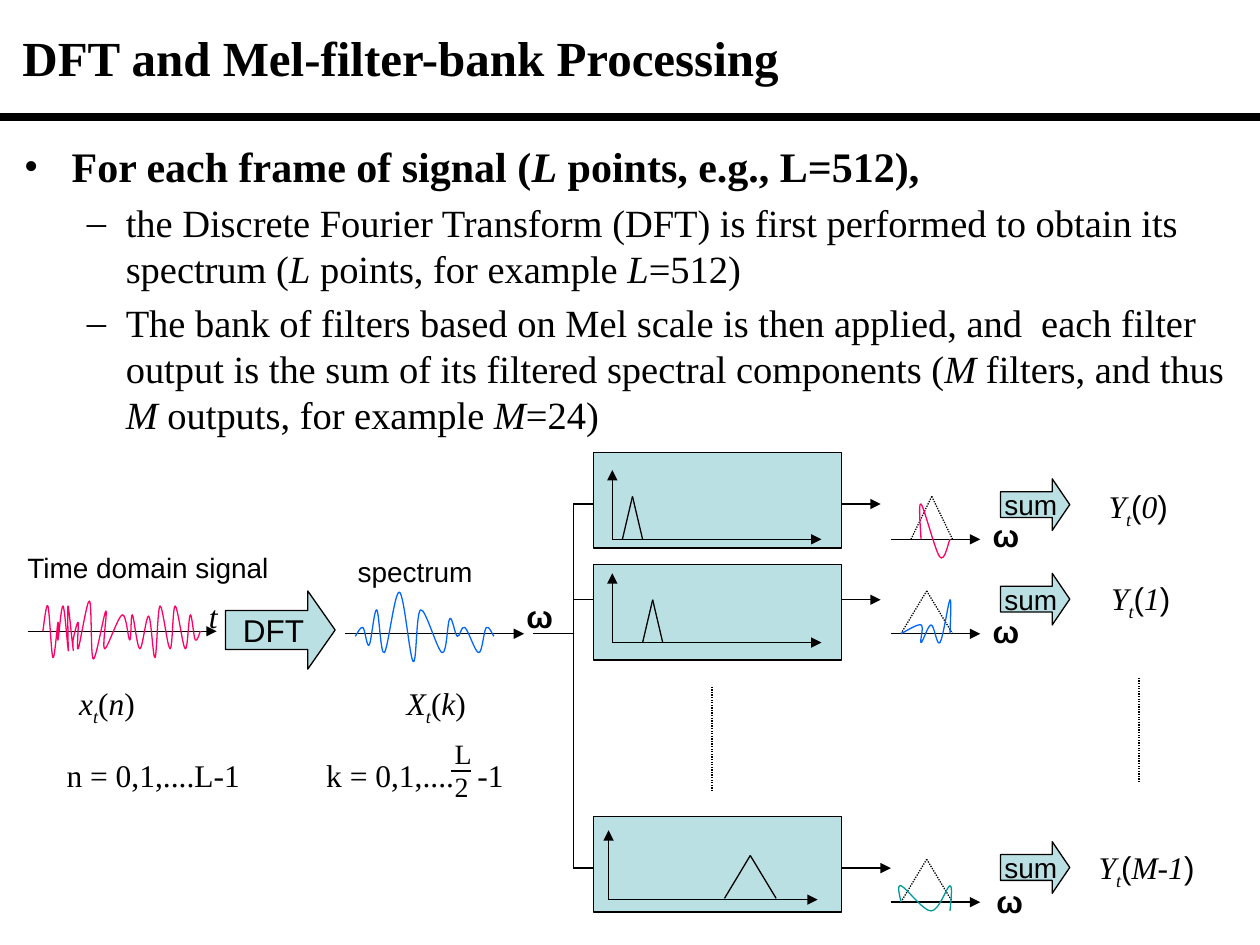
import pptx
import pptx.util
import pptx.dml.color
import pptx.enum.dml
import pptx.enum.shapes
import pptx.enum.text
import pptx.oxml
import pptx.oxml.ns

Inches = pptx.util.Inches
Pt = pptx.util.Pt
RGB = pptx.dml.color.RGBColor.from_string
SHAPE = pptx.enum.shapes.MSO_SHAPE
ANCHOR = pptx.enum.text.MSO_ANCHOR
qn = pptx.oxml.ns.qn
NS = pptx.oxml.ns.nsdecls("a")
theme = {
    "ink": RGB("000000"), "panel": RGB("BBE0E3"),
    "pink": RGB("FF0066"), "blue": RGB("0066FF"), "teal": RGB("009999"),
    "serif": "Times New Roman", "sans": "Arial",
    "title": 28, "lead": 24, "body": 22, "label": 18, "small": 16,
    "hairline": 0.75, "rule": 4.5,
}

deck = pptx.Presentation()
deck.slide_width, deck.slide_height = Inches(10), Inches(7.5)
page = deck.slides.add_slide(deck.slide_layouts[6])


def add_line(start, end, arrow=False, dotted=False, width="hairline"):
    line = page.shapes.add_connector(
        pptx.enum.shapes.MSO_CONNECTOR.STRAIGHT, *map(Inches, start + end))
    line.line.color.rgb = theme["ink"]
    line.line.width = Pt(theme[width])
    if dotted:
        line.line.dash_style = pptx.enum.dml.MSO_LINE.ROUND_DOT
    if arrow:
        stroke = line._element.spPr.find(qn("a:ln"))
        stroke.append(pptx.oxml.parse_xml(f'<a:tailEnd {NS} type="triangle"/>'))
    line._element.spPr.append(pptx.oxml.parse_xml(f"<a:effectLst {NS}/>"))


def add_spans(para, spans, size):
    for words, style in spans:
        span = para.add_run()
        span.text = words
        span.font.name = theme["sans" if "a" in style else "serif"]
        span.font.size = Pt(theme[size])
        span.font.color.rgb = theme["ink"]
        span.font.bold = "b" in style
        span.font.italic = "i" in style
        if "s" in style:
            span._r.get_or_add_rPr().set("baseline", "-25000")


add_line((0, 0.93), (10, 0.93), width="rule")
title = page.shapes.add_textbox(*map(Inches, (0.08, 0.08, 9.84, 0.75))).text_frame
title.word_wrap = True
title.vertical_anchor = ANCHOR.MIDDLE
add_spans(title.paragraphs[0], [("DFT and Mel-filter-bank Processing", "b")], "title")

bullets = [
    ("•", 0.38, 0.38, "lead", [("For each frame of signal (", "b"), ("L", "bi"),
                               (" points, e.g., L=512),", "b")]),
    ("–", 0.81, 0.31, "body", [
        ("the Discrete Fourier Transform (DFT) is first performed to obtain its spectrum (", ""),
        ("L", "i"), (" points, for example ", ""), ("L", "i"), ("=512)", "")]),
    ("–", 0.81, 0.31, "body", [
        ("The bank of filters based on Mel scale is then applied, and  each filter output "
         "is the sum of its filtered spectral components (", ""),
        ("M", "i"), (" filters, and thus ", ""), ("M", "i"),
        (" outputs, for example ", ""), ("M", "i"), ("=24)", "")]),
]
body = page.shapes.add_textbox(*map(Inches, (0.09, 1.07, 9.79, 6.06))).text_frame
body.word_wrap = True
for index, (mark, margin, hang, size, spans) in enumerate(bullets):
    para = body.add_paragraph() if index else body.paragraphs[0]
    para.level = 1 if index else 0
    para.space_before = Pt(0.2 * theme[size])
    settings = para._p.get_or_add_pPr()
    settings.set("marL", str(Inches(margin)))
    settings.set("indent", str(-Inches(hang)))
    settings.append(pptx.oxml.parse_xml(f'<a:buFont {NS} typeface="{theme["serif"]}"/>'))
    settings.append(pptx.oxml.parse_xml(f'<a:buChar {NS} char="{mark}"/>'))
    add_spans(para, spans, size)

channels = [
    dict(wire=4, wire_end=6.99, panel=3.59, origin=(4.86, 4.28), filter=(4.94, 5.1, 4.28),
         axis=4.28, band=7.23, sum=3.8, omega=(7.78, 4.05), label=(8.7, 3.82, 0.68), index="0"),
    dict(wire=4.76, wire_end=6.99, panel=4.48, origin=(4.86, 5.1), filter=(5.1, 5.26, 5.1),
         axis=5.03, band=7.15, sum=4.55, omega=(7.78, 4.81), label=(8.72, 4.55, 0.68), index="1"),
    dict(wire=6.89, wire_end=7.07, panel=6.48, origin=(4.83, 7.14), filter=(5.75, 6.16, 7.13),
         axis=7.16, band=7.15, sum=6.68, omega=(7.81, 6.95), label=(8.62, 6.68, 0.98),
         index="M-1"),
]

add_line((0.22, 5.01), (1.72, 5.01), arrow=True)
add_line((2.74, 5.03), (4.16, 5.03), arrow=True)
add_line((4.23, 5.03), (4.55, 5.03))
add_line((4.55, 4), (4.55, 6.89))
for x, top in ((5.65, 5.45), (9.04, 5.38)):
    add_line((x, top), (x, top + 0.82), dotted=True)
for channel in channels:
    add_line((4.55, channel["wire"]), (channel["wire_end"], channel["wire"]), arrow=True)

blocks = [(SHAPE.RIGHT_ARROW, (1.79, 4.69, 0.87, 0.62), 0.35, "DFT", "label")]
for channel in channels:
    blocks.append((SHAPE.RECTANGLE, (4.71, channel["panel"], 1.97, 0.76), None, "", "label"))
    blocks.append((SHAPE.RIGHT_ARROW, (7.94, channel["sum"], 0.55, 0.41), 0.34, "sum", "small"))
for kind, place, head, words, size in blocks:
    block = page.shapes.add_shape(kind, *map(Inches, place))
    block.shadow.inherit = False
    block.fill.solid()
    block.fill.fore_color.rgb = theme["panel"]
    block.line.color.rgb = theme["ink"]
    block.line.width = Pt(theme["hairline"])
    if head:
        block.adjustments[1] = head
        block.text_frame.word_wrap = False
        block.text_frame.vertical_anchor = ANCHOR.MIDDLE
        para = block.text_frame.paragraphs[0]
        para.alignment = pptx.enum.text.PP_ALIGN.CENTER
        add_spans(para, [(words, "a")], size)

for channel in channels:
    x, y = channel["origin"]
    add_line((x, y), (x, y - 0.55), arrow=True)
    add_line((x, y), (x + 1.66, y), arrow=True)
    add_line((7.07, channel["axis"]), (7.78, channel["axis"]), arrow=True)
    for left, right, base, dotted in ((*channel["filter"], False),
                                      (channel["band"], 7.56, channel["axis"], True)):
        peak = ((left + right) / 2, base - 0.34)
        add_line((left, base), peak, dotted=dotted)
        add_line(peak, (right, base), dotted=dotted)

curves = [
    ("pink", [(0.34, 5.01), (0.38, 4.81), (0.42, 5.22), (0.46, 4.94), (0.46, 5.08),
              (0.5, 4.81), (0.54, 5.15), (0.54, 5.08), (0.54, 4.81), (0.58, 5.15),
              (0.58, 5.08), (0.62, 4.94), (0.62, 5.15), (0.71, 4.77), (0.74, 5.23),
              (0.84, 4.85), (0.83, 5.15), (0.97, 4.88), (1.03, 5.08), (1.05, 4.88),
              (1.11, 5.15), (1.18, 4.89), (1.23, 5.22), (1.27, 4.81), (1.35, 5.15),
              (1.39, 4.81), (1.47, 5.15), (1.51, 4.88), (1.55, 5.08), (1.59, 5.01)]),
    ("blue", [(2.82, 5.05), (2.88, 4.98), (2.93, 5.12), (2.99, 4.84), (3.05, 5.18),
              (3.17, 4.7), (3.28, 5.25), (3.34, 4.84), (3.51, 5.18), (3.57, 4.91),
              (3.63, 5.05), (3.69, 4.98), (3.8, 5.18), (3.86, 4.98), (3.92, 5.05)]),
    ("pink", [(7.31, 4.28), (7.31, 4), (7.46, 4.42), (7.54, 4.28)]),
    ("blue", [(7.15, 5.03), (7.31, 4.96), (7.31, 5.1), (7.39, 4.96), (7.46, 5.1),
              (7.54, 4.76), (7.54, 5.03)]),
    ("teal", [(7.15, 7.16), (7.15, 7.03), (7.39, 7.23), (7.54, 7.03), (7.54, 7.23)]),
]
for color, knots in curves:
    builder = page.shapes.build_freeform(*map(Inches, knots[0]))
    builder.add_line_segments([tuple(map(Inches, knot)) for knot in knots[1:]], close=False)
    curve = builder.convert_to_shape()
    curve.shadow.inherit = False
    curve.fill.background()
    curve.line.color.rgb = theme[color]
    curve.line.width = Pt(theme["hairline"])
    outline = curve._element.spPr
    dots = [(int(dot.get("x")), int(dot.get("y"))) for dot in outline.iter(qn("a:pt"))]
    padded = [dots[0], *dots, dots[-1]]
    for index, segment in enumerate(list(outline.iter(qn("a:lnTo")))):
        before, start, end, after = padded[index:index + 4]
        leave = [b + (c - a) / 6 for a, b, c in zip(before, start, end)]
        reach = [c - (d - b) / 6 for b, c, d in zip(start, end, after)]
        segment.tag = qn("a:cubicBezTo")
        for slot, (x, y) in enumerate((leave, reach)):
            segment.insert(slot, pptx.oxml.parse_xml(
                f'<a:pt {NS} x="{round(x)}" y="{round(y)}"/>'))

labels = [
    (1.56, 4.69, 0.31, "label", [("t", "i")]),
    (4.08, 4.69, 0.31, "label", [("ω", "ab")]),
    (0.12, 4.32, 2.13, "small", [("Time domain signal", "a")]),
    (2.74, 4.35, 1.12, "small", [("spectrum", "a")]),
    (0.53, 5.38, 0.65, "label", [("x", "i"), ("t", "is"), ("(", ""), ("n", "i"), (")", "")]),
    (3.13, 5.38, 0.7, "label", [("X", "i"), ("t", "is"), ("(", ""), ("k", "i"), (")", "")]),
    (0.43, 5.95, 1.73, "label", [("n = 0,1,....L-1", "")]),
    (2.49, 5.95, 1.65, "label", [("k = 0,1,....\t-1", "")]),
    (3.51, 5.8, 0.39, "small", [("L", "")]),
    (3.51, 6.06, 0.39, "small", [("2", "")]),
]
for channel in channels:
    labels.append((*channel["omega"], 0.31, "label", [("ω", "ab")]))
    labels.append((*channel["label"], "label", [
        ("Y", "i"), ("t", "is"), ("(", "a"), (channel["index"], "i"), (")", "a")]))
for left, top, width, size, spans in labels:
    height = 0.4 if size == "label" else 0.37
    box = page.shapes.add_textbox(*map(Inches, (left, top, width, height))).text_frame
    box.word_wrap = width < 0.4 or width in (1.65, 1.73)
    para = box.paragraphs[0]
    if "\t" in spans[0][0]:
        para._p.get_or_add_pPr().append(pptx.oxml.parse_xml(
            f'<a:tabLst {NS}><a:tab pos="{Inches(1.2)}" algn="l"/></a:tabLst>'))
    add_spans(para, spans, size)
add_line((3.58, 6.12), (3.74, 6.12))

deck.save("out.pptx")
